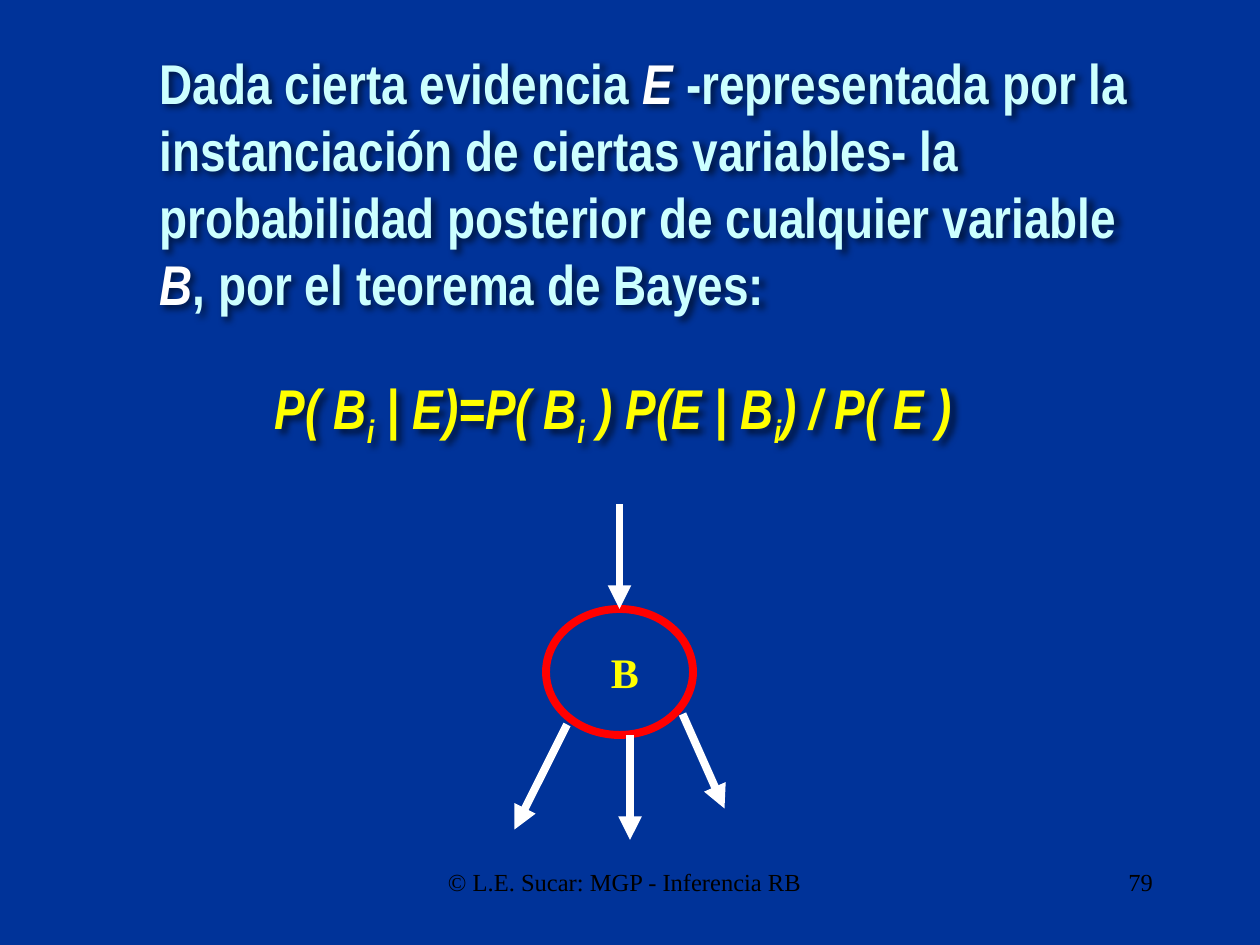
from dataclasses import dataclass

from lxml.etree import SubElement
from pptx import Presentation
from pptx.dml.color import RGBColor
from pptx.enum.shapes import MSO_CONNECTOR, MSO_SHAPE
from pptx.enum.text import MSO_ANCHOR, MSO_AUTO_SIZE, PP_ALIGN
from pptx.oxml.ns import qn
from pptx.util import Emu, Pt

EMU_PER_PX = 7620  # 120 px to the inch


@dataclass(frozen=True)
class Theme:
    background: str = "003399"
    statement: str = "CCFFFF"
    variable: str = "FFFFFF"
    formula: str = "FFFF00"
    node: str = "FF0000"
    arrow: str = "FFFFFF"
    footer: str = "000000"
    sans: str = "Arial Narrow"
    serif: str = "Times New Roman"
    text_size: int = 32
    node_size: int = 24
    footer_size: int = 14
    line_width: float = 4.5


THEME = Theme()


def px(value):
    return Emu(value * EMU_PER_PX)


def rgb(value):
    return RGBColor.from_string(value)


def place(shape, box):
    for name, value in zip(("left", "top", "width", "height"), box):
        setattr(shape, name, px(value))


def add_run(paragraph, text, color, baseline=None, **font_format):
    run = paragraph.add_run()
    run.text = text
    for name, value in font_format.items():
        setattr(run.font, name, value)
    run.font.color.rgb = rgb(color)
    if baseline is not None:
        run.font._element.set("baseline", str(baseline))


def prepare_frame(shape, wrap=True, align=PP_ALIGN.LEFT):
    """Set up the text frame and return its first paragraph."""
    frame = shape.text_frame
    settings = {"word_wrap": wrap, "auto_size": MSO_AUTO_SIZE.NONE,
                "vertical_anchor": MSO_ANCHOR.TOP}
    for name, value in settings.items():
        setattr(frame, name, value)
    paragraph = frame.paragraphs[0]
    paragraph.alignment = align
    return paragraph


def add_text_box(slide, box, **frame_format):
    shape = slide.shapes.add_textbox(*map(px, box))
    return prepare_frame(shape, **frame_format), shape


def add_text_shadow(shape):
    """An unfilled shape casts its shadow from its letters."""
    effects = SubElement(shape._element.spPr, qn("a:effectLst"))
    shadow = SubElement(effects, qn("a:outerShdw"), blurRad=str(Pt(4)),
                        dist=str(Pt(3)), dir="2700000", algn="tl", rotWithShape="0")
    color = SubElement(shadow, qn("a:srgbClr"), val="000000")
    SubElement(color, qn("a:alpha"), val="60000")


def add_statement(slide, box):
    title = slide.shapes.title
    place(title, box)
    title.fill.background()
    paragraph = prepare_frame(title)
    parts = (
        ("Dada cierta evidencia ", False),
        ("E", True),
        (" -representada por la instanciación de ciertas variables- la "
         "probabilidad posterior de cualquier variable ", False),
        ("B", True),
        (", por el teorema de Bayes:", False),
    )
    for text, is_variable in parts:
        add_run(paragraph, text, THEME.variable if is_variable else THEME.statement,
                name=THEME.sans, size=Pt(THEME.text_size), bold=True, italic=is_variable)
    add_text_shadow(title)


def add_formula(slide, box):
    paragraph, shape = add_text_box(slide, box, wrap=False)
    terms = ("P( B", " | E)=P( B", " ) P(E | B", ") / P( E )")
    style = {"name": THEME.sans, "size": Pt(THEME.text_size), "bold": True, "italic": True}
    for index, term in enumerate(terms):
        if index:
            add_run(paragraph, "i", THEME.formula, baseline=-25000, **style)
        add_run(paragraph, term, THEME.formula, **style)
    add_text_shadow(shape)


def add_arrow(slide, start, end):
    arrow = slide.shapes.add_connector(MSO_CONNECTOR.STRAIGHT, *map(px, (*start, *end)))
    arrow.line.color.rgb = rgb(THEME.arrow)
    arrow.line.width = Pt(THEME.line_width)
    SubElement(arrow.line._get_or_add_ln(), qn("a:tailEnd"), type="triangle")
    SubElement(arrow._element.spPr, qn("a:effectLst"))


def add_network(slide, box):
    """Node B with one arrow from its parent and three to its children."""
    left, top, _, _ = box
    node = slide.shapes.add_shape(MSO_SHAPE.OVAL, *map(px, (left + 30, top + 100, 140, 120)))
    node.shadow.inherit = False
    node.fill.background()
    node.line.color.rgb = rgb(THEME.node)
    node.line.width = Pt(THEME.line_width)

    label, _ = add_text_box(slide, (left + 80, top + 130, 50, 60), wrap=False)
    add_run(label, "B", THEME.formula, name=THEME.serif, size=Pt(THEME.node_size), bold=True)

    arrows = (
        ((100, 0), (100, 100)),
        ((110, 220), (110, 320)),
        ((50, 210), (0, 310)),
        ((160, 200), (200, 290)),
    )
    for ends in arrows:
        add_arrow(slide, *((left + x, top + y) for x, y in ends))


def add_footer(slide, box):
    left, top, width, height = box
    parts = (
        ("© L.E. Sucar: MGP - Inferencia RB", left, 470, PP_ALIGN.CENTER),
        ("79", left + width - 250, 250, PP_ALIGN.RIGHT),
    )
    for text, part_left, part_width, align in parts:
        paragraph, _ = add_text_box(slide, (part_left, top, part_width, height), align=align)
        add_run(paragraph, text, THEME.footer, name=THEME.serif, size=Pt(THEME.footer_size))


def main():
    presentation = Presentation()
    presentation.slide_width, presentation.slide_height = px(1200), px(900)
    slide = presentation.slides.add_slide(presentation.slide_layouts.get_by_name("Title Only"))
    slide.background.fill.solid()
    slide.background.fill.fore_color.rgb = rgb(THEME.background)
    add_footer(slide, (360, 820, 750, 60))
    add_statement(slide, (140, 40, 960, 268))
    add_formula(slide, (250, 350, 672, 76))
    add_network(slide, (490, 480, 200, 320))
    presentation.save("out.pptx")


if __name__ == "__main__":
    main()
